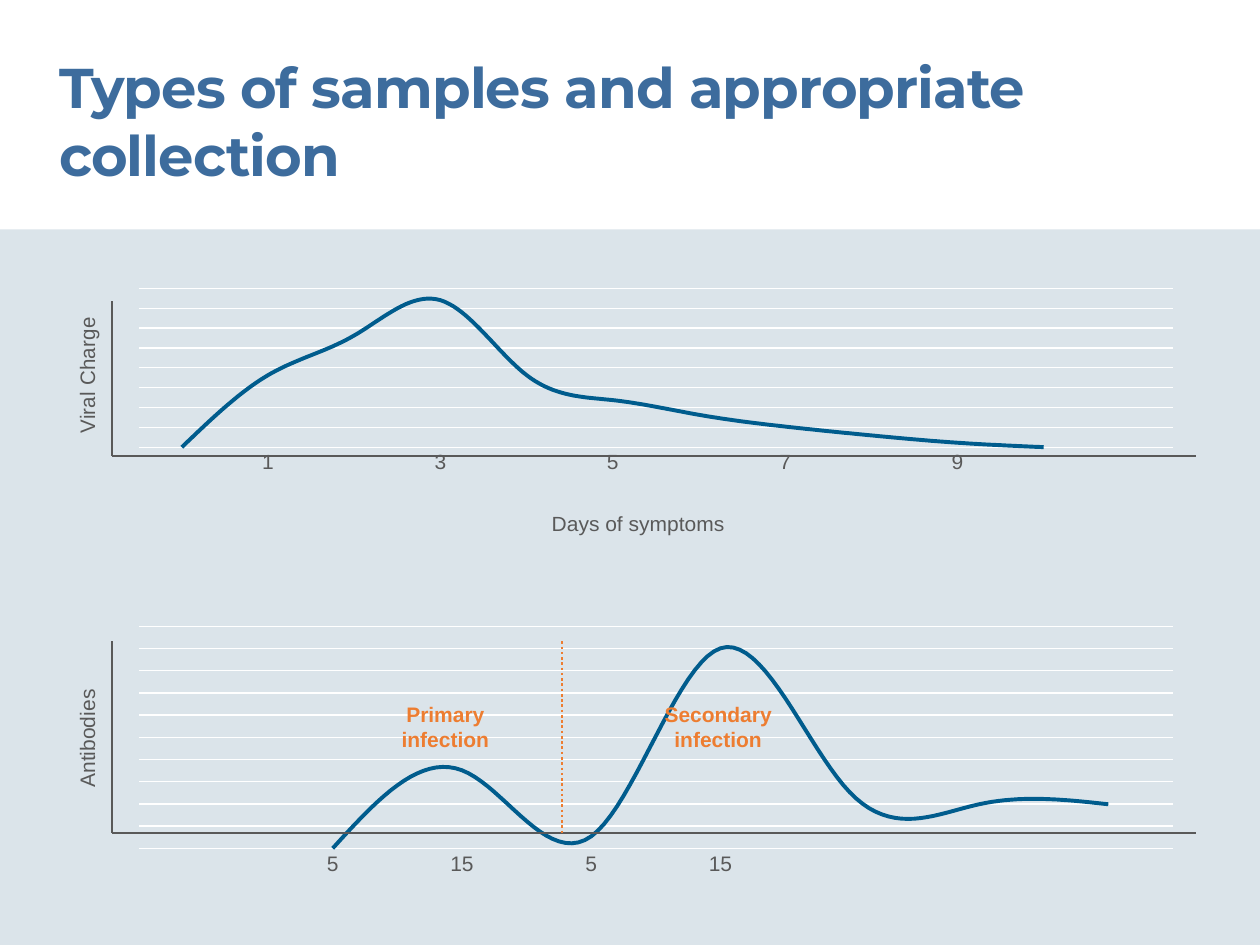
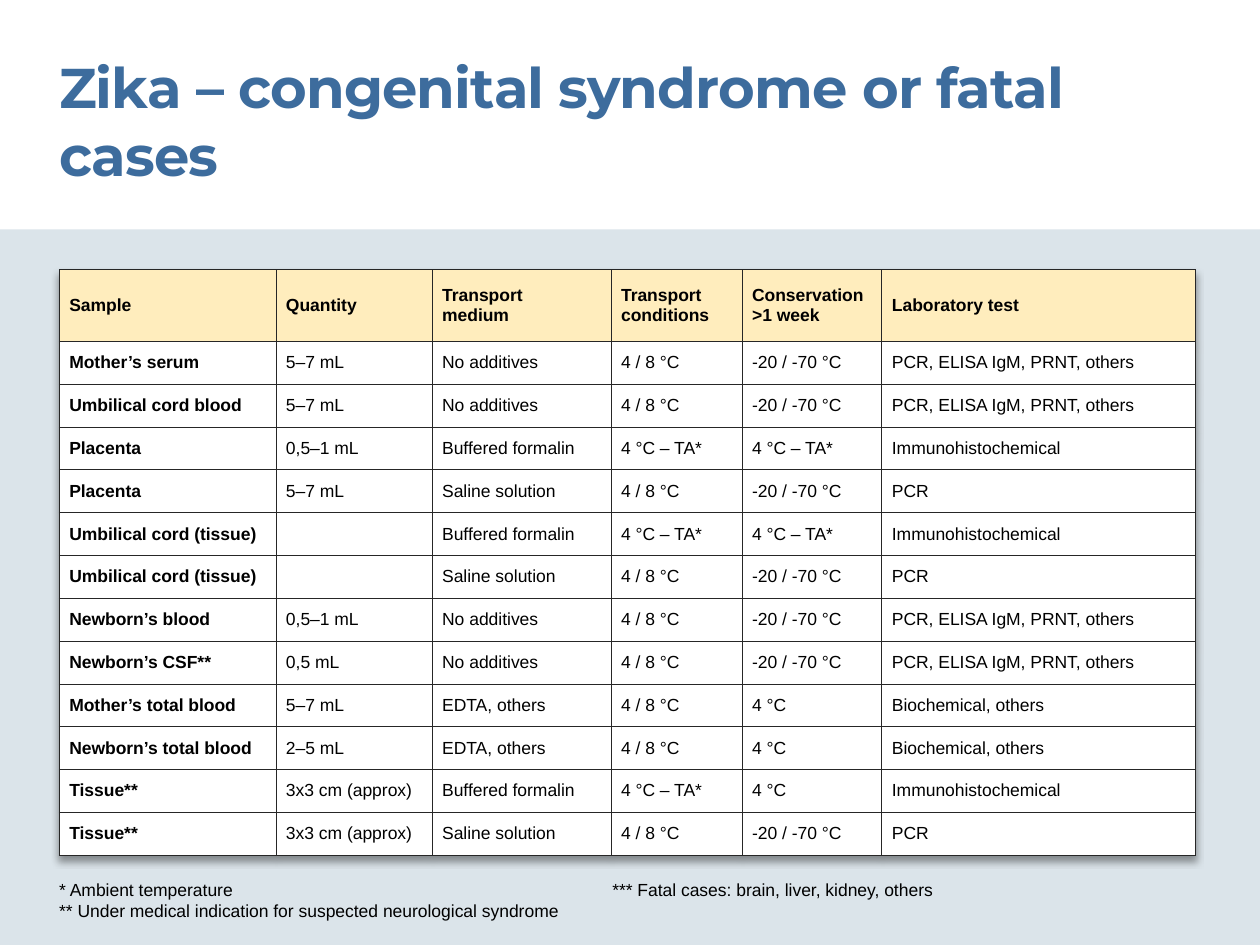
from dataclasses import dataclass

from lxml import etree
from pptx import Presentation
from pptx import util as u
from pptx.chart.data import CategoryChartData
from pptx.dml.color import RGBColor
from pptx.enum import chart as charts, dml, shapes, text
from pptx.oxml import parse_xml
from pptx.oxml.ns import nsdecls, qn


@dataclass(frozen=True)
class Theme:
    title_font: str = "Montserrat"
    body_font: str = "Arial"
    title: str = "3D6C9D"
    band: str = "DBE4EA"
    curve: str = "005C8D"
    axis: str = "595959"
    accent: str = "ED7D31"
    header: str = "FFEDBD"
    border: str = "262626"
    white: str = "FFFFFF"
    black: str = "000000"
    title_size: int = 32
    label_size: int = 12
    table_size: int = 10


THEME = Theme()
LEFT, CONTENT_WIDTH = 0.47, 9.02
CHART_HEIGHT = 2.05
AXIS_LEFT, AXIS_RIGHT = 0.89, 9.49

COLUMN_WIDTHS = [1.72, 1.24, 1.42, 1.04, 1.11, 2.49]
HEADER_HEIGHT, ROW_HEIGHT = 0.57, 0.34
COLD, FROZEN, AMBIENT = "4 / 8 °C", "-20 / -70 °C", "4 °C – TA*"
SEROLOGY, TISSUE_TEST = "PCR, ELISA IgM, PRNT, others", "Immunohistochemical"
FORMALIN, SALINE = "Buffered formalin", "Saline solution"
SAMPLES = [
    ["Sample", "Quantity", "Transport\nmedium", "Transport\nconditions",
     "Conservation\n>1 week", "Laboratory test"],
    ["Mother’s serum", "5–7 mL", "No additives", COLD, FROZEN, SEROLOGY],
    ["Umbilical cord blood", "5–7 mL", "No additives", COLD, FROZEN, SEROLOGY],
    ["Placenta", "0,5–1 mL", FORMALIN, AMBIENT, AMBIENT, TISSUE_TEST],
    ["Placenta", "5–7 mL", SALINE, COLD, FROZEN, "PCR"],
    ["Umbilical cord (tissue)", "", FORMALIN, AMBIENT, AMBIENT, TISSUE_TEST],
    ["Umbilical cord (tissue)", "", SALINE, COLD, FROZEN, "PCR"],
    ["Newborn’s blood", "0,5–1 mL", "No additives", COLD, FROZEN, SEROLOGY],
    ["Newborn’s CSF**", "0,5 mL", "No additives", COLD, FROZEN, SEROLOGY],
    ["Mother’s total blood", "5–7 mL", "EDTA, others", COLD, "4 °C", "Biochemical, others"],
    ["Newborn’s total blood", "2–5 mL", "EDTA, others", COLD, "4 °C", "Biochemical, others"],
    ["Tissue**", "3x3 cm (approx)", FORMALIN, AMBIENT, "4 °C", TISSUE_TEST],
    ["Tissue**", "3x3 cm (approx)", SALINE, COLD, FROZEN, "PCR"],
]


def style_font(font, size, color, bold=False, name=THEME.body_font):
    font.name = name
    font.size = u.Pt(size)
    font.bold = bold
    font.color.rgb = RGBColor.from_string(color)


def write_lines(frame, lines, size, color, bold=False, name=THEME.body_font, align=None):
    """Write one paragraph per line and return the runs."""
    runs = []
    for index, line in enumerate(lines):
        paragraph = frame.add_paragraph() if index else frame.paragraphs[0]
        paragraph.alignment = align
        run = paragraph.add_run()
        run.text = line
        style_font(run.font, size, color, bold, name)
        runs.append(run)
    return runs


def clear_insets(frame):
    frame.word_wrap = True
    frame.auto_size = text.MSO_AUTO_SIZE.NONE
    frame.vertical_anchor = text.MSO_ANCHOR.TOP
    frame.margin_left = frame.margin_right = frame.margin_top = frame.margin_bottom = 0


def place(shape, left, top, width, height):
    shape.left, shape.top = u.Inches(left), u.Inches(top)
    shape.width, shape.height = u.Inches(width), u.Inches(height)


def add_titled_slide(presentation, title):
    slide = presentation.slides.add_slide(presentation.slide_layouts[5])
    band = slide.shapes.add_shape(shapes.MSO_SHAPE.RECTANGLE, 0, u.Inches(1.82),
                                  u.Inches(10), u.Inches(5.68))
    band.shadow.inherit = False
    band.fill.solid()
    band.fill.fore_color.rgb = RGBColor.from_string(THEME.band)
    band.line.fill.background()
    placeholder = slide.shapes.title
    place(placeholder, LEFT, 0.42, 8.55, 1.08)
    clear_insets(placeholder.text_frame)
    run, = write_lines(placeholder.text_frame, [title], THEME.title_size, THEME.title,
                       True, THEME.title_font, text.PP_ALIGN.LEFT)
    run.font._element.set("spc", "-50")
    return slide


def add_text(slide, box, lines, size, color, bold=False, align=text.PP_ALIGN.LEFT):
    shape = slide.shapes.add_textbox(*map(u.Inches, box))
    clear_insets(shape.text_frame)
    write_lines(shape.text_frame, lines, size, color, bold, align=align)


def add_line(slide, start, end, color=THEME.axis, dash=None):
    line = slide.shapes.add_connector(shapes.MSO_CONNECTOR.STRAIGHT,
                                      *map(u.Inches, (*start, *end)))
    line.line.color.rgb = RGBColor.from_string(color)
    line.line.width = u.Pt(1.5)
    if dash:
        line.line.dash_style = dash
    etree.SubElement(line._element.spPr, qn("a:effectLst"))


def set_layout(parent, index, inner=False, **fractions):
    """Fix a chart part at fractions (x, y, w, h) of the chart frame."""
    for old in parent.findall(qn("c:layout")):
        parent.remove(old)
    layout = etree.Element(qn("c:layout"))
    manual = etree.SubElement(layout, qn("c:manualLayout"))
    if inner:
        etree.SubElement(manual, qn("c:layoutTarget"), val="inner")
    for mode in ("xMode", "yMode"):
        etree.SubElement(manual, qn(f"c:{mode}"), val="edge")
    for key, value in fractions.items():
        etree.SubElement(manual, qn(f"c:{key}"), val=str(value))
    parent.insert(index, layout)


def add_axis_title(axis, title, x, y, rotated=False):
    frame = axis.axis_title.text_frame
    write_lines(frame, [title], THEME.label_size, THEME.axis)
    element = axis.axis_title._element
    if rotated:
        body = element.find(".//" + qn("a:bodyPr"))
        body.set("rot", "-5400000")
        body.set("vert", "horz")
    set_layout(element, 1, x=x, y=y)


def clear_chart_background(chart):
    no_fill = f"<c:spPr {nsdecls('c', 'a')}><a:noFill/><a:ln><a:noFill/></a:ln></c:spPr>"
    space = chart._chartSpace
    space.find(qn("c:chart")).addnext(parse_xml(no_fill))
    space.find(".//" + qn("c:plotArea")).append(parse_xml(no_fill))


def add_curve(slide, top, categories, values, maximum, unit, plot_height):
    """Add a smooth line chart without a visible value axis."""
    data = CategoryChartData()
    data.categories = categories
    data.add_series("Series 1", values)
    chart = slide.shapes.add_chart(
        charts.XL_CHART_TYPE.LINE, *map(u.Inches, (LEFT, top, CONTENT_WIDTH, CHART_HEIGHT)),
        data).chart
    chart.has_title = chart.has_legend = False
    style_font(chart.font, THEME.table_size, THEME.black)
    clear_chart_background(chart)
    set_layout(chart._chartSpace.find(".//" + qn("c:plotArea")), 0, inner=True,
               x=0.07, y=0.02, w=0.91, h=plot_height)
    chart.plots[0].vary_by_categories = False

    series = chart.plots[0].series[0]
    series.smooth = True
    series.marker.style = charts.XL_MARKER_STYLE.NONE
    series.format.line.color.rgb = RGBColor.from_string(THEME.curve)
    series.format.line.width = u.Pt(2.25)

    days = chart.category_axis
    days.major_tick_mark = days.minor_tick_mark = charts.XL_TICK_MARK.NONE
    days.format.line.fill.background()
    style_font(days.tick_labels.font, THEME.label_size, THEME.axis)

    level = chart.value_axis
    level.minimum_scale, level.maximum_scale, level.major_unit = 0, maximum, unit
    level.has_major_gridlines = True
    grid = level.major_gridlines.format.line
    grid.color.rgb = RGBColor.from_string(THEME.white)
    grid.width = u.Pt(0.75)
    level.visible = False
    return chart


def add_axes(slide, top, bottom):
    add_line(slide, (AXIS_RIGHT, bottom), (AXIS_LEFT, bottom))
    add_line(slide, (AXIS_LEFT, top), (AXIS_LEFT, bottom))


def set_borders(cell):
    properties = cell._tc.get_or_add_tcPr()
    for index, side in enumerate(("lnL", "lnR", "lnT", "lnB")):
        properties.insert(index, parse_xml(
            f'<a:{side} {nsdecls("a")} w="6350"><a:solidFill>'
            f'<a:srgbClr val="{THEME.border}"/></a:solidFill></a:{side}>'))


def fill_cell(cell, content, is_header, bold):
    cell.margin_left = cell.margin_right = u.Inches(0.08)
    cell.margin_top = cell.margin_bottom = u.Inches(0.05)
    cell.vertical_anchor = text.MSO_ANCHOR.MIDDLE
    cell.fill.solid()
    cell.fill.fore_color.rgb = RGBColor.from_string(THEME.header if is_header else THEME.white)
    set_borders(cell)
    if content:
        write_lines(cell.text_frame, content.split("\n"), THEME.table_size, THEME.black, bold)
    else:
        etree.SubElement(cell.text_frame.paragraphs[0]._p, qn("a:endParaRPr"),
                         sz=str(THEME.table_size * 100))


def add_sample_table(slide):
    height = HEADER_HEIGHT + ROW_HEIGHT * (len(SAMPLES) - 1)
    table = slide.shapes.add_table(
        len(SAMPLES), len(COLUMN_WIDTHS),
        *map(u.Inches, (LEFT, 2.14, CONTENT_WIDTH, height))).table
    table.first_row = table.horz_banding = False
    table._tbl.tblPr.insert(0, parse_xml(
        f'<a:effectLst {nsdecls("a")}><a:outerShdw blurRad="50800" dist="38100" dir="5400000">'
        f'<a:srgbClr val="{THEME.black}"><a:alpha val="40000"/></a:srgbClr>'
        '</a:outerShdw></a:effectLst>'))
    for column, width in zip(table.columns, COLUMN_WIDTHS):
        column.width = u.Inches(width)
    for row_index, contents in enumerate(SAMPLES):
        is_header = row_index == 0
        table.rows[row_index].height = u.Inches(HEADER_HEIGHT if is_header else ROW_HEIGHT)
        for column_index, content in enumerate(contents):
            fill_cell(table.cell(row_index, column_index), content, is_header,
                      is_header or column_index == 0)


def build_collection_slide(presentation):
    slide = add_titled_slide(presentation, "Types of samples and appropriate collection")
    viral = add_curve(slide, 2.25, ["", "1", "", "3", "", "5", "", "7", "", "9", "", ""],
                      [0, 49, 76, 100, 49, 32, 22, 14, 8, 3, 0, None][:10] + [0, None],
                      108, 13.5, 0.63)
    add_axis_title(viral.category_axis, "Days of symptoms", 0.43, 0.89)
    add_axis_title(viral.value_axis, "Viral Charge", 0.01, 0.13, rotated=True)
    antibodies = add_curve(slide, 4.93, ["", "5", "15", "5", "15", "", "", ""],
                           [None, 0, 39, 6, 100, 28, 22, 22], 111, 11.1, 0.86)
    add_axis_title(antibodies.value_axis, "Antibodies", 0.01, 0.25, rotated=True)
    add_axes(slide, 2.39, 3.62)
    add_axes(slide, 5.09, 6.61)
    add_line(slide, (4.46, 5.09), (4.46, 6.61), THEME.accent, dml.MSO_LINE.ROUND_DOT)
    for label, left, width in (("Primary infection", 3.07, 0.93),
                               ("Secondary infection", 5.16, 1.08)):
        add_text(slide, (left, 5.57, width, 0.4), [label], THEME.label_size,
                 THEME.accent, True, text.PP_ALIGN.CENTER)


def build_zika_slide(presentation):
    slide = add_titled_slide(presentation, "Zika – congenital syndrome or fatal cases")
    add_sample_table(slide)
    add_text(slide, (LEFT, 6.98, 4.13, 0.34),
             ["* Ambient temperature",
              "** Under medical indication for suspected neurological syndrome"],
             THEME.table_size, THEME.black)
    add_text(slide, (4.86, 6.98, 3.44, 0.17),
             ["*** Fatal cases: brain, liver, kidney, others"], THEME.table_size, THEME.black)


def main():
    presentation = Presentation()
    presentation.slide_width, presentation.slide_height = u.Inches(10), u.Inches(7.5)
    build_collection_slide(presentation)
    build_zika_slide(presentation)
    presentation.save("out.pptx")


if __name__ == "__main__":
    main()
